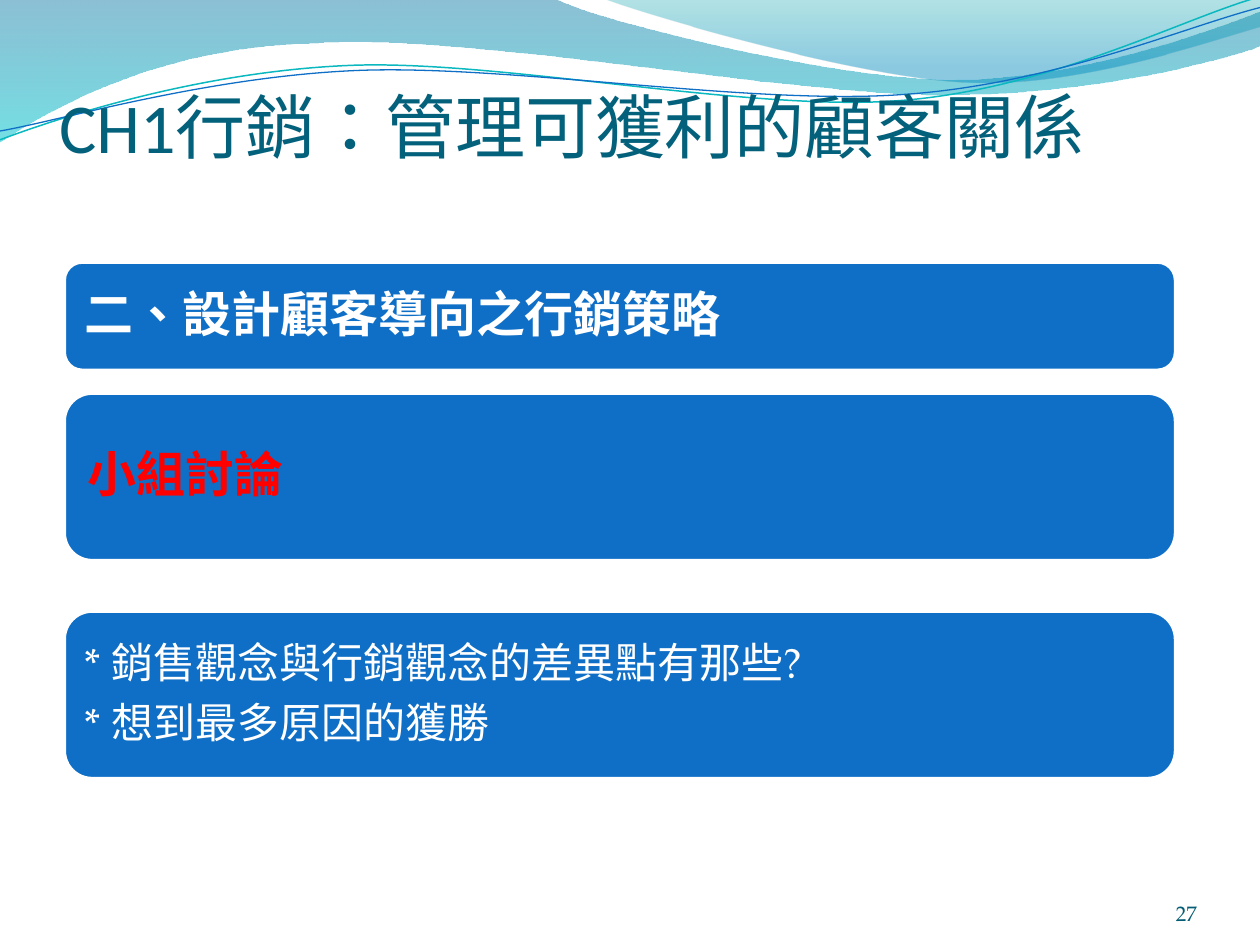
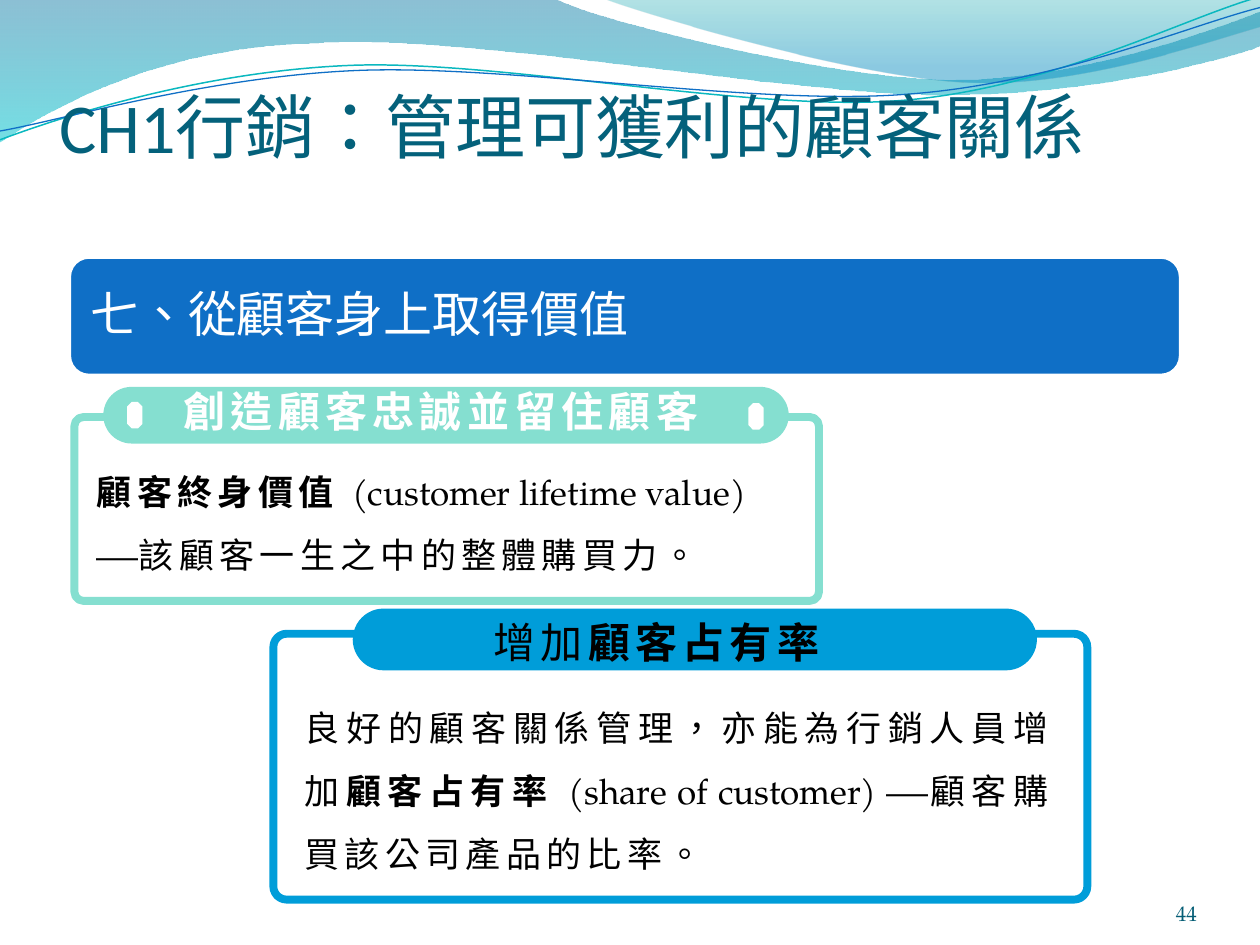
"""Builds two marketing-course slides: a group discussion and capturing customer value."""
from dataclasses import dataclass
from typing import NamedTuple

from lxml import etree
from pptx import Presentation
from pptx.dml.color import RGBColor
from pptx.enum.lang import MSO_LANGUAGE_ID
from pptx.enum.shapes import MSO_SHAPE
from pptx.enum.text import MSO_ANCHOR, MSO_AUTO_SIZE, PP_ALIGN
from pptx.oxml.ns import qn
from pptx.util import Emu, Inches, Pt

ROUNDED, OCTAGON = MSO_SHAPE.ROUNDED_RECTANGLE, MSO_SHAPE.OCTAGON
TOP, MIDDLE, BOTTOM = MSO_ANCHOR.TOP, MSO_ANCHOR.MIDDLE, MSO_ANCHOR.BOTTOM
LEFT, CENTER, RIGHT, JUSTIFY = PP_ALIGN.LEFT, PP_ALIGN.CENTER, PP_ALIGN.RIGHT, PP_ALIGN.JUSTIFY
LANGUAGE = MSO_LANGUAGE_ID.TRADITIONAL_CHINESE

SLIDE_WIDTH, SLIDE_HEIGHT = Inches(10), Inches(7.5)
COLUMN, ROW = SLIDE_WIDTH / 100, SLIDE_HEIGHT / 75
TITLE_ONLY = 5
CHAPTER = "CH1行銷：管理可獲利的顧客關係"


@dataclass(frozen=True)
class Theme:
    """Colours, fonts and type sizes shared by the slides."""
    title_font: str = "Calibri"
    body_font: str = "TeX Gyre Pagella"
    title: str = "04617B"
    number: str = "045D75"
    card: str = "0F6FC6"
    aqua: str = "0AB8BF"
    mint: str = "85DFD0"
    sky: str = "009DD9"
    alert: str = "FF0000"
    white: str = "FFFFFF"
    black: str = "000000"
    title_size: float = 40
    heading_size: float = 28
    label_size: float = 24
    body_size: float = 20
    number_size: float = 12
    tracking: float = 3


THEME = Theme()


class Box(NamedTuple):
    """A place on the grid, in columns and rows."""
    left: float
    top: float
    width: float
    height: float

    def emu(self) -> tuple:
        """Return left, top, width and height as lengths."""
        units = (COLUMN, ROW, COLUMN, ROW)
        return tuple(Emu(round(cells * unit)) for cells, unit in zip(self, units))


class Style(NamedTuple):
    """The look of a paragraph."""
    size: float
    color: str
    bold: bool = False
    align: PP_ALIGN = LEFT
    tracking: float = 0
    line_spacing: float = 1
    space_after: float = 0
    font: str = THEME.body_font


class Phrase(NamedTuple):
    """A part of a paragraph with its own weight and tracking."""
    text: str
    bold: bool = False
    tracking: float = THEME.tracking


class Stop(NamedTuple):
    """A gradient stop; position and opacity are shares of one."""
    position: float
    color: str
    opacity: float


class Wave(NamedTuple):
    """A curved band or line; one point is a straight step, three are a Bezier."""
    start: tuple
    steps: tuple
    stops: tuple = ()
    line: str = ""
    weight: float = 0


class Card(NamedTuple):
    """A filled card with left-aligned lines of text."""
    box: Box
    lines: tuple
    size: float = THEME.heading_size
    color: str = THEME.white
    bold: bool = False
    inset: float = 0.12


class Panel(NamedTuple):
    """A framed explanation with a pill-shaped label."""
    frame: Box
    pill: Box
    label_box: Box
    label: tuple
    label_style: Style
    body_box: Box
    body: tuple
    body_align: PP_ALIGN
    color: str
    studs: tuple = ()


WAVES = (
    Wave((0, 0), (
        ((44, -0.1),),
        ((47.6, 1.7), (66.4, 6.3), (75.8, 6.3)),
        ((85.3, 6.3), (95.8, 2.6), (100, 0.9)),
        ((100.1, 3.6),),
        ((98.3, 4.4), (87, 7.6), (74.6, 7.5)),
        ((62.2, 7.5), (38.2, 2.8), (25.7, 3.4)),
        ((12.9, 3.6), (4.6, 8.3), (-0.1, 11.3)),
        ((0, 0),),
    ), stops=(Stop(0, "0074A1", 0.45), Stop(1, "00C6CF", 0.55))),
    Wave((47.9, -0.1), (
        ((50.9, 1.1), (68.2, 6.2), (76.9, 6.5)),
        ((85.6, 6.9), (96.1, 3.2), (100, 2.1)),
        ((100, 0),),
        ((47.9, -0.1),),
    ), stops=(Stop(0, "00A1A9", 0.3), Stop(0.8, "008BBF", 0.45))),
    Wave((0, 11.1), (
        ((4.8, 9.3), (15.8, 5.7), (27.7, 5.2)),
        ((39.5, 4.7), (59.3, 8.9), (71.3, 8)),
        ((83.3, 7.1), (93.8, 1.5), (99.8, -0.2)),
    ), line=THEME.aqua, weight=0.85),
    Wave((0, 10.4), (
        ((4.7, 9.6), (16.4, 6.1), (28.3, 5.6)),
        ((40.3, 5.1), (59.7, 8.4), (71.7, 7.5)),
        ((83.6, 6.7), (94.1, 2.1), (100, 0.6)),
    ), line=THEME.card, weight=0.75),
)

DISCUSSION_CARDS = (
    Card(Box(5.1, 20.8, 88.2, 8.6), ("二、設計顧客導向之行銷策略",), bold=True),
    Card(Box(5.1, 31.2, 88.2, 13.3), ("小組討論",), color=THEME.alert, bold=True),
    Card(Box(5.1, 48.5, 88.2, 13.3),
         ("* 銷售觀念與行銷觀念的差異點有那些?", "* 想到最多原因的獲勝"),
         size=THEME.label_size, inset=0.1),
)
VALUE_CARDS = (Card(Box(5.5, 20.4, 88.2, 9.4), ("七、從顧客身上取得價值",)),)
VALUE_PANELS = (
    Panel(
        frame=Box(5.9, 33.1, 59.1, 14.6), pill=Box(8.2, 30.7, 54.4, 4.5),
        label_box=Box(11.4, 30.1, 47.2, 5),
        label=(Phrase("創造顧客忠誠並留住顧客", True),),
        label_style=Style(THEME.label_size, THEME.white, align=CENTER),
        body_box=Box(6.7, 35.2, 55.1, 10.5),
        body=(Phrase("顧客終身價值 ", True),
              Phrase("(customer lifetime value) ──", tracking=0),
              Phrase("該顧客一生之中的整體購買力。")),
        body_align=LEFT, color=THEME.mint,
        studs=(Box(59.4, 32, 1.2, 2.1), Box(10.1, 31.9, 1.2, 2.1)),
    ),
    Panel(
        frame=Box(21.7, 50.3, 64.6, 21.1), pill=Box(28, 48.3, 54.3, 4.9),
        label_box=Box(38.2, 48.4, 29.8, 5),
        label=(Phrase("增加"), Phrase("顧客占有率", True)),
        label_style=Style(THEME.label_size, THEME.black),
        body_box=Box(23.2, 53.9, 61.4, 16.2),
        body=(Phrase("良好的顧客關係管理，亦能為行銷人員增加"),
              Phrase("顧客占有率 ", True),
              Phrase("(share of customer) ──", tracking=0),
              Phrase("顧客購買該公司產品的比率。")),
        body_align=JUSTIFY, color=THEME.sky,
    ),
)


def set_tracking(font, points: float) -> None:
    """Set the space between letters."""
    font._element.set("spc", str(round(points * 100)))


def format_paragraph(paragraph, style: Style) -> None:
    """Apply a style to a whole paragraph."""
    paragraph.alignment = style.align
    paragraph.line_spacing = style.line_spacing
    paragraph.space_before = Pt(0)
    paragraph.space_after = Pt(style.space_after)
    font = paragraph.font
    font.name, font.size, font.bold = style.font, Pt(style.size), style.bold
    font.color.rgb = RGBColor.from_string(style.color)
    font.language_id = LANGUAGE
    set_tracking(font, style.tracking)


def set_frame(frame, anchor: MSO_ANCHOR, insets: tuple) -> None:
    """Set wrapping, anchor and insets (left, top, right, bottom) in inches."""
    frame.word_wrap = True
    frame.auto_size = MSO_AUTO_SIZE.NONE
    frame.vertical_anchor = anchor
    (frame.margin_left, frame.margin_top,
     frame.margin_right, frame.margin_bottom) = map(Inches, insets)


def add_phrases(slide, box: Box, phrases: tuple, style: Style) -> None:
    """Add a text box whose phrases differ in weight and tracking."""
    frame = slide.shapes.add_textbox(*box.emu()).text_frame
    set_frame(frame, TOP, (0.1, 0.05, 0.1, 0.05))
    paragraph = frame.paragraphs[0]
    format_paragraph(paragraph, style)
    for phrase in phrases:
        run = paragraph.add_run()
        run.text = phrase.text
        run.font.bold = phrase.bold
        set_tracking(run.font, phrase.tracking)


def paint(shape, fill: str = "", line: str = "", weight: float = 0) -> None:
    """Give a shape a plain fill and outline, or none, and no shadow."""
    shape.shadow.inherit = False
    if fill:
        shape.fill.solid()
        shape.fill.fore_color.rgb = RGBColor.from_string(fill)
    else:
        shape.fill.background()
    if line:
        shape.line.color.rgb = RGBColor.from_string(line)
        shape.line.width = Pt(weight)
    else:
        shape.line.fill.background()


def paint_gradient(shape, stops: tuple) -> None:
    """Fill a shape from top to bottom with translucent colours."""
    shape.fill.gradient()
    shape.fill.gradient_angle = 270
    for target, stop in zip(shape.fill.gradient_stops, stops):
        target.position = stop.position
        target.color.rgb = RGBColor.from_string(stop.color)
        color = target._gs.find(qn("a:srgbClr"))
        etree.SubElement(color, qn("a:alpha")).set("val", str(round(stop.opacity * 100000)))


def to_emu(point: tuple) -> tuple:
    """Turn a grid point into lengths."""
    return round(point[0] * COLUMN), round(point[1] * ROW)


def bend(band, steps: tuple) -> None:
    """Turn the straight segments of curved steps into Beziers."""
    segments = list(band._element.iter(qn("a:lnTo")))
    for segment, step in zip(segments, steps):
        if len(step) == 1:
            continue
        curve = etree.Element(qn("a:cubicBezTo"))
        for x, y in map(to_emu, step):
            etree.SubElement(curve, qn("a:pt"), x=str(x - band.left), y=str(y - band.top))
        segment.getparent().replace(segment, curve)


def add_waves(slide) -> None:
    """Draw the waves and hand them to the layout that all slides share."""
    for wave in WAVES:
        builder = slide.shapes.build_freeform(*to_emu(wave.start))
        builder.add_line_segments([to_emu(step[-1]) for step in wave.steps],
                                  close=bool(wave.stops))
        band = builder.convert_to_shape()
        bend(band, wave.steps)
        paint(band, line=wave.line, weight=wave.weight)
        if wave.stops:
            paint_gradient(band, wave.stops)
        slide.slide_layout.shapes._spTree.append(band._element)


def add_card(slide, card: Card) -> None:
    """Draw a card with its lines."""
    shape = slide.shapes.add_shape(ROUNDED, *card.box.emu())
    paint(shape, THEME.card, THEME.white, 2)
    set_frame(shape.text_frame, MIDDLE, (card.inset,) * 4)
    shape.text_frame.text = "\n".join(card.lines)
    style = Style(card.size, card.color, card.bold, line_spacing=0.9,
                  space_after=card.size * 0.35)
    for paragraph in shape.text_frame.paragraphs:
        format_paragraph(paragraph, style)


def add_panel(slide, panel: Panel) -> None:
    """Draw a framed panel with its label and explanation."""
    for box, rounding, fill, line in ((panel.frame, 0.05, "", panel.color),
                                      (panel.pill, 0.5, panel.color, "")):
        shape = slide.shapes.add_shape(ROUNDED, *box.emu())
        shape.adjustments[0] = rounding
        paint(shape, fill, line, 4.5)
    for stud in panel.studs:
        paint(slide.shapes.add_shape(OCTAGON, *stud.emu()), THEME.white)
    add_phrases(slide, panel.label_box, panel.label, panel.label_style)
    add_phrases(slide, panel.body_box, panel.body,
                Style(THEME.body_size, THEME.black, align=panel.body_align, line_spacing=1.5))


def add_slide(deck, number: str, cards: tuple):
    """Add a slide with the chapter title, its page number and its cards."""
    slide = deck.slides.add_slide(deck.slide_layouts[TITLE_ONLY])
    title = slide.shapes.title
    title.left, title.top, title.width, title.height = Box(4.7, 3.1, 88.3, 13.3).emu()
    page = slide.shapes.add_textbox(*Box(86.7, 69.5, 8.3, 4).emu())
    for holder, text, anchor, inset, style in (
            (title, CHAPTER, MIDDLE, 0.05,
             Style(THEME.title_size, THEME.title, font=THEME.title_font)),
            (page, number, BOTTOM, 0, Style(THEME.number_size, THEME.number, align=RIGHT))):
        holder.text_frame.text = text
        set_frame(holder.text_frame, anchor, (0, inset, 0, 0))
        format_paragraph(holder.text_frame.paragraphs[0], style)
    for card in cards:
        add_card(slide, card)
    return slide


def main() -> None:
    """Build and save the slides."""
    deck = Presentation()
    deck.slide_width, deck.slide_height = SLIDE_WIDTH, SLIDE_HEIGHT
    add_waves(add_slide(deck, "27", DISCUSSION_CARDS))
    value = add_slide(deck, "44", VALUE_CARDS)
    for panel in VALUE_PANELS:
        add_panel(value, panel)
    deck.save("out.pptx")


if __name__ == "__main__":
    main()
